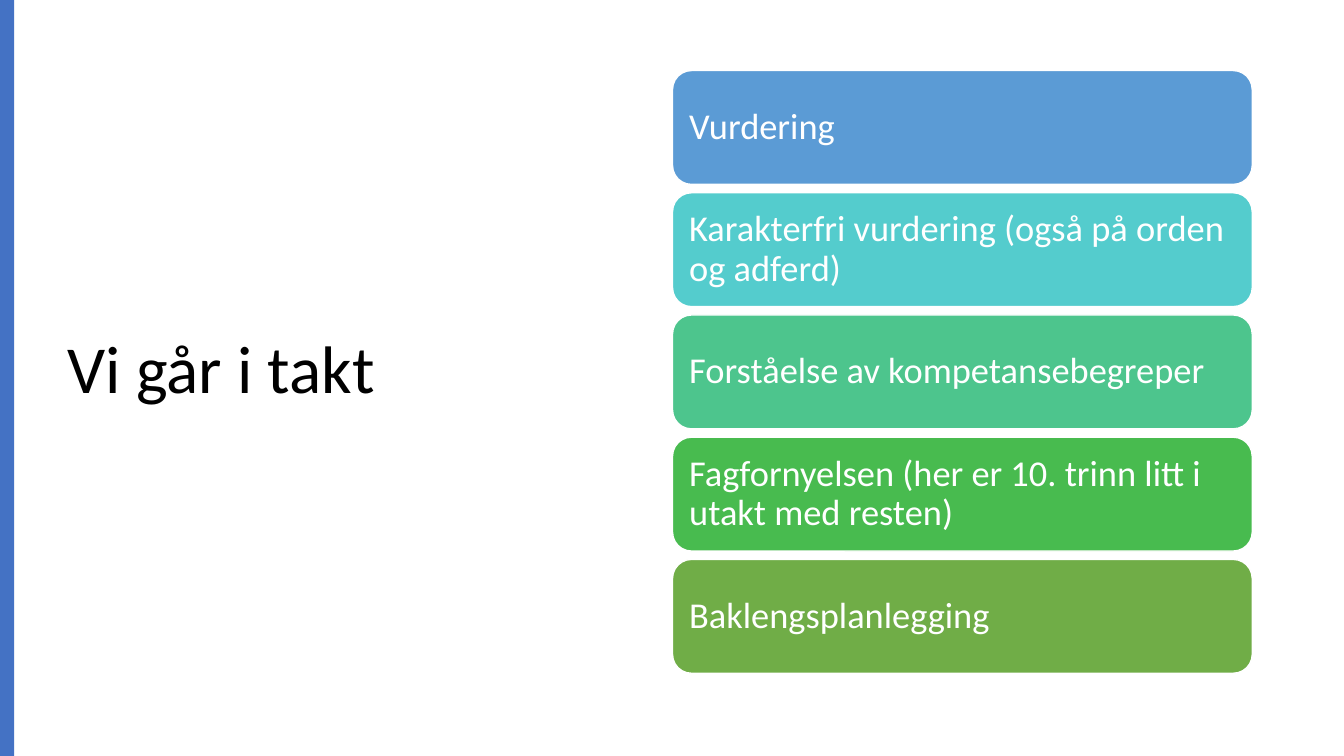
from pptx import Presentation
from pptx.dml.color import RGBColor
from pptx.enum.shapes import MSO_SHAPE
from pptx.enum.text import MSO_ANCHOR, MSO_AUTO_SIZE, PP_ALIGN
from pptx.util import Inches, Pt

WHITE = RGBColor(0xFF, 0xFF, 0xFF)
BLACK = RGBColor(0x00, 0x00, 0x00)
ACCENT = RGBColor(0x44, 0x72, 0xC4)
BLUE = RGBColor(0x5B, 0x9B, 0xD5)
TURQUOISE = RGBColor(0x54, 0xCC, 0xCD)
SEA_GREEN = RGBColor(0x4D, 0xC5, 0x8D)
GREEN = RGBColor(0x48, 0xBB, 0x4F)
OLIVE = RGBColor(0x70, 0xAD, 0x47)

TOPICS = [
    ("Vurdering", BLUE),
    ("Karakterfri vurdering (også på orden og adferd)", TURQUOISE),
    ("Forståelse av kompetansebegreper", SEA_GREEN),
    ("Fagfornyelsen (her er 10. trinn litt i utakt med resten)", GREEN),
    ("Baklengsplanlegging", OLIVE),
]
FIRST_TOP, LAST_TOP = 0.7, 5.55


def apply_format(target, values):
    for attribute, value in values.items():
        setattr(target, attribute, value)


class TopicSlide:
    FRAME = {"word_wrap": True, "auto_size": MSO_AUTO_SIZE.NONE,
             "vertical_anchor": MSO_ANCHOR.MIDDLE}
    PARAGRAPH = {"alignment": PP_ALIGN.LEFT, "line_spacing": 0.9}

    def __init__(self, presentation):
        self.slide = presentation.slides.add_slide(presentation.slide_layouts[5])

    def set_wording(self, frame, wording, size, color, inset_x, inset_y):
        frame.text = wording
        margins = {"margin_left": Inches(inset_x), "margin_right": Inches(inset_x),
                   "margin_top": Inches(inset_y), "margin_bottom": Inches(inset_y)}
        apply_format(frame, self.FRAME | margins)
        paragraph = frame.paragraphs[0]
        apply_format(paragraph, self.PARAGRAPH)
        font = paragraph.runs[0].font
        apply_format(font, {"name": "Calibri", "size": Pt(size)})
        font.color.rgb = color

    def title(self, wording, left, top, width, height):
        heading = self.slide.shapes.title
        apply_format(heading, {"left": Inches(left), "top": Inches(top),
                               "width": Inches(width), "height": Inches(height)})
        self.set_wording(heading.text_frame, wording, 48, BLACK, 0.1, 0.05)

    def block(self, preset, fill, left, top, width, height):
        block = self.slide.shapes.add_shape(
            preset, Inches(left), Inches(top), Inches(width), Inches(height))
        block.shadow.inherit = False
        block.fill.solid()
        block.fill.fore_color.rgb = fill
        block.line.fill.background()
        return block

    def card(self, wording, fill, left, top, width, height):
        card = self.block(MSO_SHAPE.ROUNDED_RECTANGLE, fill, left, top, width, height)
        card.line.color.rgb = WHITE
        card.line.width = Pt(1)
        self.set_wording(card.text_frame, wording, 26, WHITE, 0.11, 0.11)


def main():
    presentation = Presentation()
    apply_format(presentation, {"slide_width": Inches(13.33),
                                "slide_height": Inches(7.5)})
    page = TopicSlide(presentation)
    page.title("Vi går i takt", 0.57, 0.68, 5.67, 6.02)
    page.block(MSO_SHAPE.RECTANGLE, ACCENT, 0, 0, 0.14, 7.5)
    pitch = (LAST_TOP - FIRST_TOP) / (len(TOPICS) - 1)
    for position, (wording, fill) in enumerate(TOPICS):
        page.card(wording, fill, 6.67, FIRST_TOP + position * pitch, 5.75, 1.13)
    presentation.save("out.pptx")


if __name__ == "__main__":
    main()
